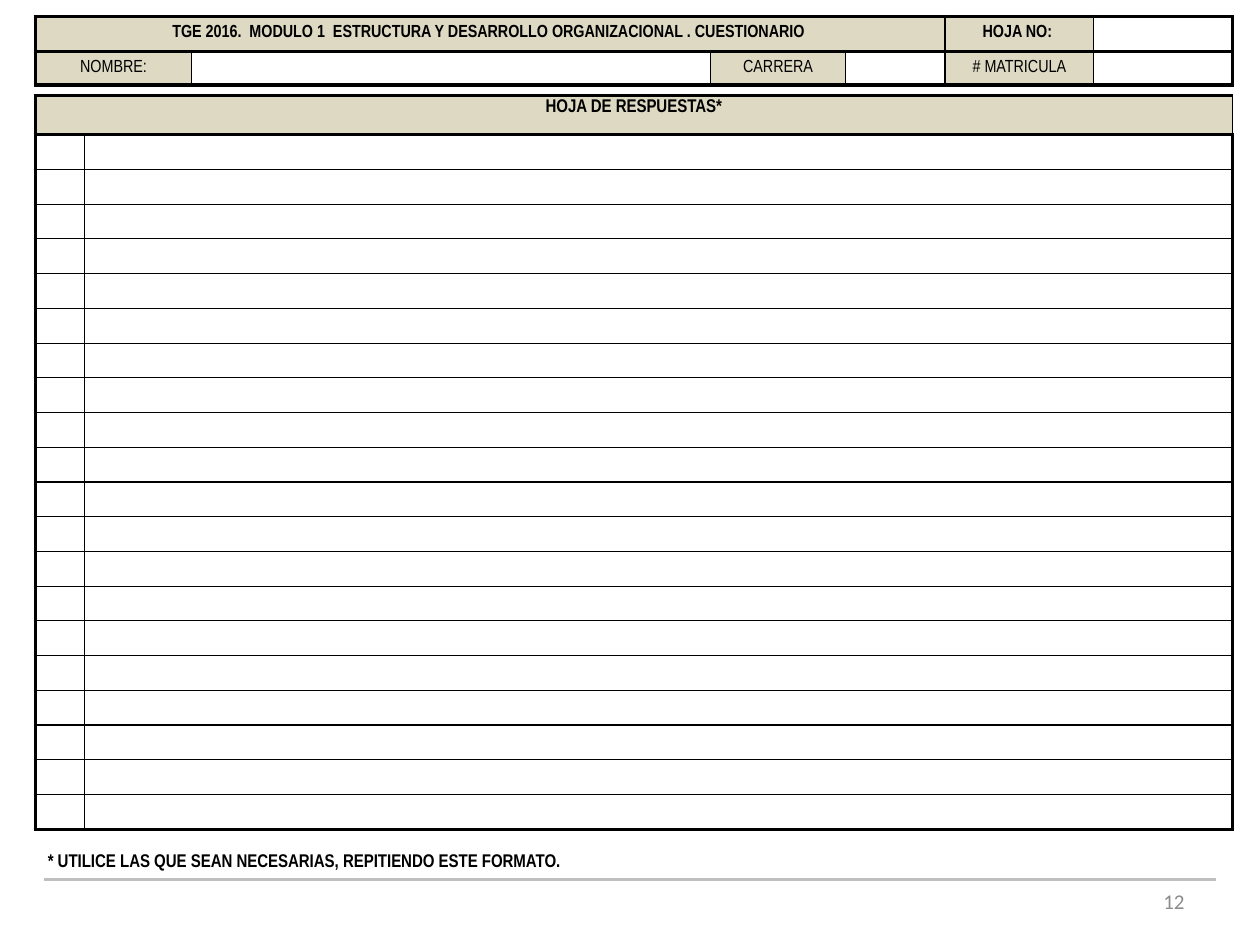
from lxml import etree
from pptx import Presentation
from pptx.dml.color import RGBColor
from pptx.enum.shapes import MSO_CONNECTOR
from pptx.enum.text import MSO_ANCHOR, PP_ALIGN
from pptx.oxml.ns import qn
from pptx.util import Pt

BLACK = RGBColor(0x00, 0x00, 0x00)
WHITE = RGBColor(0xFF, 0xFF, 0xFF)
SAND = RGBColor(0xDD, 0xD9, 0xC3)
RULE_GRAY = RGBColor(0xBF, 0xBF, 0xBF)
NUMBER_GRAY = RGBColor(0x8C, 0x8C, 0x8C)
LEFT, CENTER, RIGHT = PP_ALIGN.LEFT, PP_ALIGN.CENTER, PP_ALIGN.RIGHT
TOP, MIDDLE = MSO_ANCHOR.TOP, MSO_ANCHOR.MIDDLE
STRAIGHT = MSO_CONNECTOR.STRAIGHT

THICK, MEDIUM, THIN = 2.25, 1, 0.75
ANSWER_ROWS = 20


class FormSlide:
    """Style of the form and the slide it is drawn on."""

    font = "Arial Narrow"

    def __init__(self, prs):
        self.slide = prs.slides.add_slide(prs.slide_layouts[6])

    def set_text(self, p, text, size, bold=False, align=LEFT, color=BLACK, font=None):
        p.text = text
        p.alignment = align
        p.font.name = font or self.font
        p.font.size = Pt(size)
        p.font.bold = bold
        p.font.color.rgb = color

    def text(self, x, y, w, h, text, size, anchor=TOP, **style):
        sp = self.slide.shapes.add_textbox(Pt(x), Pt(y), Pt(w), Pt(h))
        tf = sp.text_frame
        tf.word_wrap = True
        tf.vertical_anchor = anchor
        self.set_text(tf.paragraphs[0], text, size, **style)

    def rule(self, x1, x2, y, color, width):
        line = self.slide.shapes.add_connector(STRAIGHT, Pt(x1), Pt(y), Pt(x2), Pt(y))
        line.line.color.rgb = color
        line.line.width = Pt(width)
        etree.SubElement(line._element.spPr, qn("a:effectLst"))

    def table(self, x, y, widths, heights, row_line):
        """Add an empty grid: thick frame and header line, row_line between other rows."""
        n_rows, n_cols = len(heights), len(widths)
        frame = self.slide.shapes.add_table(
            n_rows, n_cols, Pt(x), Pt(y), Pt(sum(widths)), Pt(sum(heights)))
        table = frame.table
        table.first_row = table.horz_banding = False
        for column, width in zip(table.columns, widths):
            column.width = Pt(width)
        for row, height in zip(table.rows, heights):
            row.height = Pt(height)
        across = [THICK, THICK] + [row_line] * (n_rows - 2) + [THICK]
        down = [THICK] + [MEDIUM] * (n_cols - 1) + [THICK]
        for r in range(n_rows):
            for c in range(n_cols):
                cell = table.cell(r, c)
                self.borders(cell, L=down[c], R=down[c + 1], T=across[r], B=across[r + 1])
                cell.fill.solid()
                cell.fill.fore_color.rgb = WHITE
                # Keeps blank rows from growing to the default text size
                etree.SubElement(cell.text_frame.paragraphs[0]._p,
                                 qn("a:endParaRPr"), sz="1000")
        return table

    def borders(self, cell, **widths):
        tc_pr = cell._tc.get_or_add_tcPr()
        for side, width in widths.items():
            ln = etree.SubElement(tc_pr, qn(f"a:ln{side}"), w=str(Pt(width)))
            fill = etree.SubElement(ln, qn("a:solidFill"))
            etree.SubElement(fill, qn("a:srgbClr"), val=str(BLACK))

    def label(self, cell, text, size, bold=False, anchor=MIDDLE):
        cell.fill.fore_color.rgb = SAND
        cell.vertical_anchor = anchor
        p = cell.text_frame.paragraphs[0]
        self.set_text(p, text, size, bold, CENTER)
        p.line_spacing = 0.8


def main():
    prs = Presentation()
    prs.slide_width, prs.slide_height = Pt(720), Pt(540)
    form = FormSlide(prs)

    form.rule(25.2, 694.8, 502.6, RULE_GRAY, 2)
    form.text(516, 500.5, 168, 28.8, "12", 12, MIDDLE,
              align=RIGHT, color=NUMBER_GRAY, font="Calibri")

    heading = form.table(20.2, 9.4, [89.3, 296.6, 77, 56.9, 85, 79.2], [20, 18], THICK)
    heading.cell(0, 0).merge(heading.cell(0, 3))
    title = "TGE 2016.  MODULO 1  ESTRUCTURA Y DESARROLLO ORGANIZACIONAL . CUESTIONARIO "
    for row, column, text in [
        (0, 0, title),
        (0, 4, "HOJA NO: "),
        (1, 0, "NOMBRE:"),
        (1, 2, "CARRERA"),
        (1, 4, "# MATRICULA"),
    ]:
        form.label(heading.cell(row, column), text, 10, bold=row == 0)

    answers = form.table(20.2, 54.7, [28.1, 655.9], [22.3] + [19.85] * ANSWER_ROWS, THIN)
    answers.cell(0, 0).merge(answers.cell(0, 1))
    form.label(answers.cell(0, 0), "HOJA DE RESPUESTAS*", 10.5, bold=True, anchor=TOP)

    form.text(20.2, 481.7, 668.9, 20.9,
              "* UTILICE LAS QUE SEAN NECESARIAS, REPITIENDO ESTE FORMATO.", 10.5, bold=True)

    prs.save("out.pptx")


if __name__ == "__main__":
    main()
